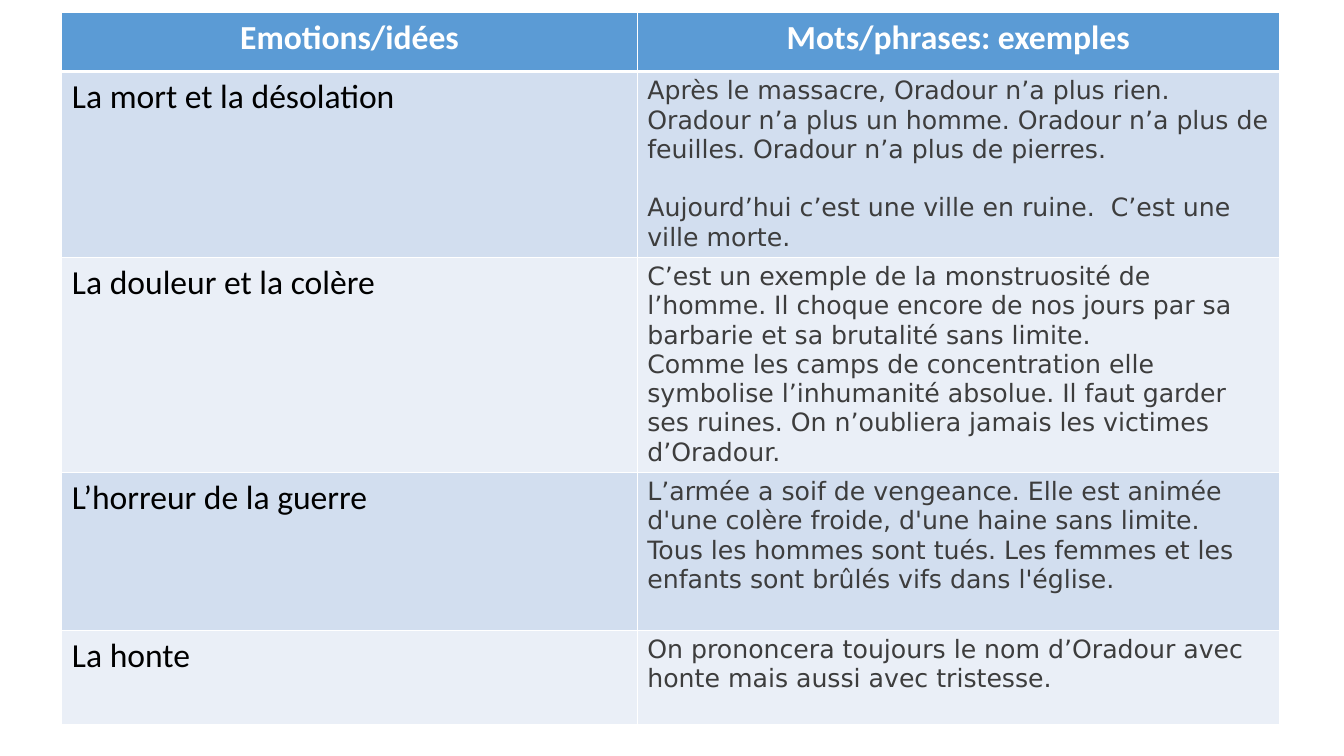
import pptx
import pptx.dml.color
import pptx.enum.text
import pptx.oxml
import pptx.oxml.ns
import pptx.util
from dataclasses import dataclass

HEADINGS = ("Emotions/idées", "Mots/phrases: exemples")

# Emotion, example paragraphs, space between the paragraphs in points
EMOTIONS = [
    ("La mort et la désolation", [
        "Après le massacre, Oradour n’a plus rien. Oradour n’a plus un homme. "
        "Oradour n’a plus de feuilles. Oradour n’a plus de pierres.",
        "Aujourd’hui c’est une ville en ruine.  C’est une ville morte.",
    ], 21),
    ("La douleur et la colère", [
        "C’est un exemple de la monstruosité de l’homme. Il choque encore de nos jours "
        "par sa barbarie et sa brutalité sans limite.",
        "Comme les camps de concentration elle symbolise l’inhumanité absolue. "
        "Il faut garder ses ruines. On n’oubliera jamais les victimes d’Oradour.",
    ], 0),
    ("L’horreur de la guerre", [
        "L’armée a soif de vengeance. Elle est animée d'une colère froide, "
        "d'une haine sans limite.",
        "Tous les hommes sont tués. Les femmes et les enfants sont brûlés vifs dans l'église.",
    ], 0),
    ("La honte", [
        "On prononcera toujours le nom d’Oradour avec honte mais aussi avec tristesse.",
    ], 0),
]

TABLE_LEFT, TABLE_TOP = 1.56, 0.32
COLUMN_WIDTHS = (14.5, 16.18)
ROW_HEIGHTS = (1.48, 4.68, 5.42, 3.98, 2.38)


@dataclass(frozen=True)
class TextStyle:
    font: str
    size: int
    color: str
    bold: bool = False
    alignment: pptx.enum.text.PP_ALIGN = pptx.enum.text.PP_ALIGN.LEFT


@dataclass(frozen=True)
class Theme:
    heading = TextStyle("Calibri", 24, "FFFFFF", True, pptx.enum.text.PP_ALIGN.CENTER)
    emotion = TextStyle("Calibri", 24, "000000")
    example = TextStyle("DejaVu Sans", 18, "3D3D3D")
    heading_fill = "5B9BD5"
    band_fills = ("D2DEEF", "EAEFF7")
    border = "FFFFFF"
    border_width = 1
    heading_border_width = 3


THEME = Theme()


def set_borders(cell, top, bottom):
    """Draw all four cell borders; top and bottom are widths in points."""
    properties = cell._tc.get_or_add_tcPr()
    widths = {"lnL": THEME.border_width, "lnR": THEME.border_width, "lnT": top, "lnB": bottom}
    for position, (tag, width) in enumerate(widths.items()):
        border = pptx.oxml.parse_xml(
            f'<a:{tag} {pptx.oxml.ns.nsdecls("a")} w="{pptx.util.Pt(width)}">'
            f'<a:solidFill><a:srgbClr val="{THEME.border}"/></a:solidFill></a:{tag}>'
        )
        properties.insert(position, border)


def write_cell(cell, paragraphs, style, fill, gap=0):
    cell.fill.solid()
    cell.fill.fore_color.rgb = pptx.dml.color.RGBColor.from_string(fill)
    frame = cell.text_frame
    for index, text in enumerate(paragraphs):
        paragraph = frame.add_paragraph() if index else frame.paragraphs[0]
        paragraph.alignment = style.alignment
        paragraph.space_before = pptx.util.Pt(gap if index else 0)
        run = paragraph.add_run()
        run.text = text
        run.font.name = style.font
        run.font.size = pptx.util.Pt(style.size)
        run.font.bold = style.bold
        run.font.color.rgb = pptx.dml.color.RGBColor.from_string(style.color)


def add_emotion_table(slide):
    table = slide.shapes.add_table(
        len(ROW_HEIGHTS), len(COLUMN_WIDTHS),
        pptx.util.Cm(TABLE_LEFT), pptx.util.Cm(TABLE_TOP),
        pptx.util.Cm(sum(COLUMN_WIDTHS)), pptx.util.Cm(sum(ROW_HEIGHTS)),
    ).table
    for column, width in zip(table.columns, COLUMN_WIDTHS):
        column.width = pptx.util.Cm(width)
    for row, height in zip(table.rows, ROW_HEIGHTS):
        row.height = pptx.util.Cm(height)

    for column, heading in enumerate(HEADINGS):
        write_cell(table.cell(0, column), [heading], THEME.heading, THEME.heading_fill)
    for row, (emotion, examples, gap) in enumerate(EMOTIONS, start=1):
        fill = THEME.band_fills[(row - 1) % len(THEME.band_fills)]
        write_cell(table.cell(row, 0), [emotion], THEME.emotion, fill)
        write_cell(table.cell(row, 1), examples, THEME.example, fill, gap)

    for index, row in enumerate(table.rows):
        top = THEME.heading_border_width if index == 1 else THEME.border_width
        bottom = THEME.heading_border_width if index == 0 else THEME.border_width
        for cell in row.cells:
            set_borders(cell, top, bottom)


def main():
    presentation = pptx.Presentation()
    presentation.slide_width = pptx.util.Cm(33.87)
    presentation.slide_height = pptx.util.Cm(19.05)
    slide = presentation.slides.add_slide(presentation.slide_layouts.get_by_name("Blank"))
    add_emotion_table(slide)
    presentation.save("out.pptx")


if __name__ == "__main__":
    main()
